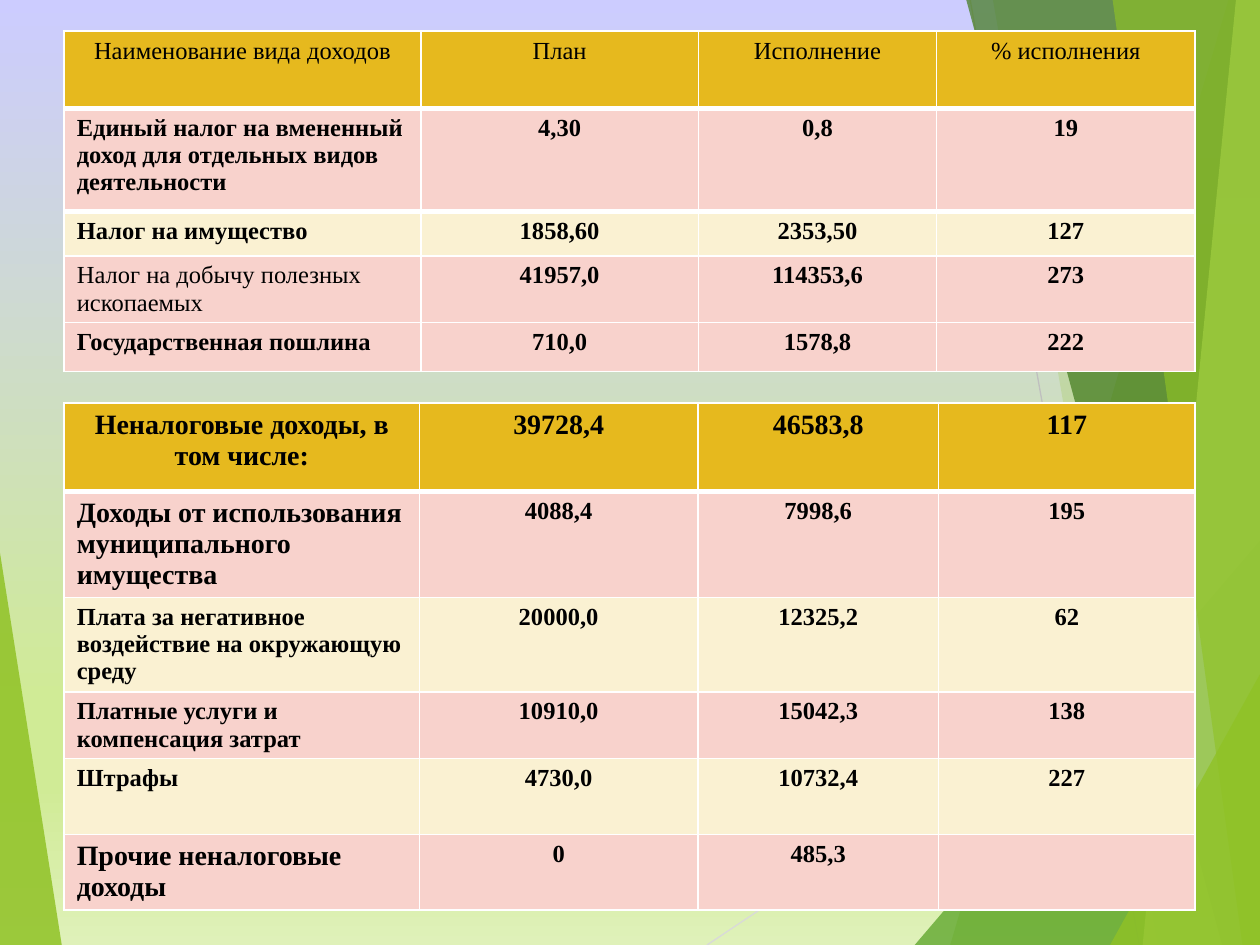
from lxml.etree import SubElement
from pptx import Presentation
from pptx.dml.color import RGBColor
from pptx.enum.shapes import MSO_CONNECTOR
from pptx.enum.text import PP_ALIGN
from pptx.oxml.ns import qn
from pptx.util import Pt

COLORS = {
    "green": "90C226", "mid": "54A021", "dark": "3F7819", "lime": "C0E474",
    "header": "E6B91E", "pink": "F8D2CC", "cream": "FAF1D2",
    "white": "FFFFFF", "black": "000000", "ray": "D9D9D9", "ray2": "BFBFBF",
}
W, H = 720, 540

prs = Presentation()
prs.slide_width, prs.slide_height = Pt(W), Pt(H)
s = prs.slides.add_slide(prs.slide_layouts[6])

# Background gradient, top to bottom
fill = s.background.fill
fill.gradient()
fill.gradient_angle = 270
stops = s.element.find(".//" + qn("a:gsLst"))
for stop in list(stops):
    stops.remove(stop)
for pos, color in [(0, "CCCCFF"), (74, "D0EB96"), (83, "D0EB96"), (100, "DFF1B9")]:
    stop = SubElement(stops, qn("a:gs"), pos=str(pos * 1000))
    SubElement(stop, qn("a:srgbClr"), val=color)


def add_facet(points, color, opacity):
    """Translucent polygon without an outline."""
    points = [(Pt(x), Pt(y)) for x, y in points]
    builder = s.shapes.build_freeform(*points[0], scale=1.0)
    builder.add_line_segments(points[1:], close=True)
    sp = builder.convert_to_shape()
    sp.shadow.inherit = False
    sp.line.fill.background()
    sp.fill.solid()
    sp.fill.fore_color.rgb = RGBColor.from_string(COLORS[color])
    clr = sp.element.spPr.find(qn("a:solidFill")).find(qn("a:srgbClr"))
    SubElement(clr, qn("a:alpha"), val=str(opacity * 1000))


# Left facet and thin rays
add_facet([(0, 316), (35.3, H), (0, H)], "green", 85)
for x1, y1, x2, y2, color in [(404, H, W, 329, "ray"), (554.4, 0, 651, H, "ray2")]:
    ray = s.shapes.add_connector(MSO_CONNECTOR.STRAIGHT, Pt(x1), Pt(y1), Pt(x2), Pt(y2))
    ray.line.color.rgb = RGBColor.from_string(COLORS[color])
    ray.line.width = Pt(0.75)
    SubElement(ray.element.spPr, qn("a:effectLst"))

# Right facets: top-left x, top y, bottom-left x, colour, opacity
for top_x, top_y, bottom_x, color, opacity in [
    (702, 0, 543, "green", 30),
    (567.4, 0, 661.7, "green", 20),
    (W, 309, 522.7, "mid", 72),
    (552.2, 0, 698.4, "dark", 70),
    (706.3, 0, 653, "lime", 70),
    (635.8, 0, 710, "green", 65),
    (W, 385.2, 634.3, "green", 80),
]:
    corners = [(top_x, top_y), (bottom_x, H), (W, H)]
    if top_x < W:
        corners.append((W, top_y))
    add_facet(corners, color, opacity)


def add_income_table(top, widths, heights, rows):
    """Rows are (fill, label format, value format, label alignment, texts)."""
    table = s.shapes.add_table(len(rows), len(widths), Pt(36.7), Pt(top),
                               Pt(sum(widths)), Pt(sum(heights))).table
    for col, width in zip(table.columns, widths):
        col.width = Pt(width)
    for i, (color, label_font, value_font, align, texts) in enumerate(rows):
        table.rows[i].height = Pt(heights[i])
        for j, text in enumerate(texts):
            cell = table.cell(i, j)
            # Borders come before the fill in the cell properties
            tcPr = cell._tc.get_or_add_tcPr()
            thick = {"T": i == 1, "B": i == 0}
            for side in "LRTB":
                width = Pt(3 if thick.get(side) else 1)
                ln = SubElement(tcPr, qn("a:ln" + side), w=str(width))
                solid = SubElement(ln, qn("a:solidFill"))
                SubElement(solid, qn("a:srgbClr"), val=COLORS["white"])
            cell.fill.solid()
            cell.fill.fore_color.rgb = RGBColor.from_string(COLORS[color])
            if not text:
                continue
            p = cell.text_frame.paragraphs[0]
            p.alignment = PP_ALIGN.CENTER if j else align
            r = p.add_run()
            r.text = text
            r.font.color.rgb = RGBColor.from_string(COLORS["black"])
            for name, value in (value_font if j else label_font).items():
                setattr(r.font, name, value)


FONT = "Times New Roman"
PLAIN = {"name": FONT, "size": Pt(14), "bold": False}
BOLD = {"name": FONT, "size": Pt(14), "bold": True}
LARGE = {"name": FONT, "size": Pt(16), "bold": True}
LEFT, CENTER = PP_ALIGN.LEFT, PP_ALIGN.CENTER

# Non-tax income
add_income_table(230.4, [203, 159.1, 137.6, 146.5], [50.4, 54, 54, 36, 43.2, 43.2], [
    ("header", LARGE, LARGE, CENTER,
     ["Неналоговые доходы, в том числе:", "39728,4", "46583,8", "117"]),
    ("pink", LARGE, BOLD, LEFT,
     ["Доходы от использования муниципального имущества", "4088,4", "7998,6", "195"]),
    ("cream", BOLD, BOLD, LEFT,
     ["Плата за негативное воздействие на окружающую среду", "20000,0", "12325,2", "62"]),
    ("pink", BOLD, BOLD, LEFT,
     ["Платные услуги и компенсация затрат", "10910,0", "15042,3", "138"]),
    ("cream", BOLD, BOLD, LEFT, ["Штрафы", "4730,0", "10732,4", "227"]),
    ("pink", LARGE, BOLD, LEFT, ["Прочие неналоговые доходы", "0", "485,3", ""]),
])

# Tax income
TAX_WIDTHS = [203.8, 158.6, 136.2, 147.6]
add_income_table(62, TAX_WIDTHS, [59, 25.2, 32.4, 28], [
    ("pink", BOLD, BOLD, LEFT,
     ["Единый налог на вмененный доход для отдельных видов деятельности",
      "4,30", "0,8", "19"]),
    ("cream", BOLD, BOLD, LEFT, ["Налог на имущество", "1858,60", "2353,50", "127"]),
    ("pink", PLAIN, BOLD, LEFT,
     ["Налог на добычу полезных ископаемых", "41957,0", "114353,6", "273"]),
    ("pink", BOLD, BOLD, LEFT, ["Государственная пошлина", "710,0", "1578,8", "222"]),
])

# Column headings
add_income_table(17.8, TAX_WIDTHS, [44.2], [
    ("header", PLAIN, PLAIN, CENTER,
     ["Наименование вида доходов", "План", "Исполнение", "% исполнения"]),
])

prs.save("out.pptx")
